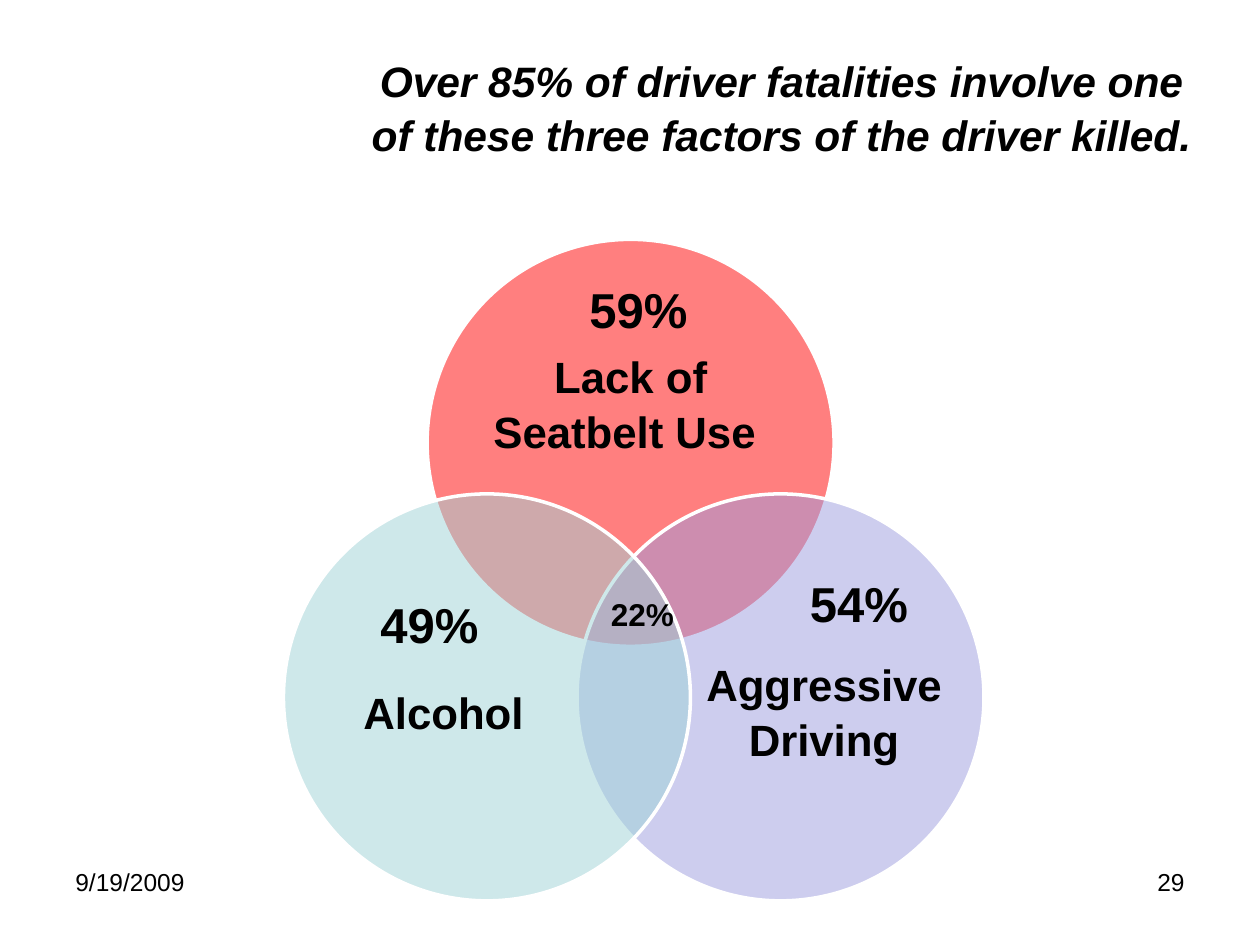
from dataclasses import dataclass

from lxml import etree
from pptx import Presentation, util as u
from pptx.dml.color import RGBColor
from pptx.enum import shapes, text
from pptx.oxml.ns import qn

WIDTH, HEIGHT = 10, 7.5
FONT = "Arial"
COLORS = {"ink": "000000", "edge": "FFFFFF", "seatbelt": "FF0000",
          "aggressive": "9C9CDF", "alcohol": "9ED3D7"}
DIAMETER = 3.23
LOWER_ROW = 3.92
LOWER_LABEL = (4.75, 1.94, 1.78)  # top, width, height
ALIGN = text.PP_ALIGN


@dataclass(frozen=True)
class Box:
    left: float
    top: float
    width: float
    height: float

    def inches(self) -> tuple:
        return tuple(u.Inches(v) for v in
                     (self.left, self.top, self.width, self.height))


@dataclass(frozen=True)
class Factor:
    color: str
    left: float
    top: float
    label: str
    label_box: Box


@dataclass(frozen=True)
class Share:
    value: str
    box: Box
    size: int = 28


def lower_label(left: float) -> Box:
    top, width, height = LOWER_LABEL
    return Box(left, top, width, height)


def share_box(left: float, top: float) -> Box:
    return Box(left, top, 0.99, 0.57)


FACTORS = [
    Factor("seatbelt", 3.39, 1.9, "Lack of Seatbelt Use ",
           Box(3.82, 2.47, 2.37, 1.45)),
    Factor("aggressive", 4.58, LOWER_ROW, "Aggressive\nDriving", lower_label(5.57)),
    Factor("alcohol", 2.25, LOWER_ROW, "Alcohol", lower_label(2.55)),
]
SHARES = [
    Share("59%", share_box(4.58, 2.17)),
    Share("49%", share_box(2.92, 4.67)),
    Share("54%", share_box(6.33, 4.5)),
    Share("22%", Box(4.75, 4.67, 0.78, 0.4), 18),
]


def color(name: str) -> RGBColor:
    return RGBColor.from_string(COLORS[name])


def write(frame, words: str, size: float, align=ALIGN.LEFT, bold=False,
          italic=False, spacing=None) -> None:
    frame.text = words
    for paragraph in frame.paragraphs:
        paragraph.alignment = align
        paragraph.line_spacing = spacing
        font = paragraph.font
        font.name, font.size = FONT, u.Pt(size)
        font.bold, font.italic = bold, italic
        font.color.rgb = color("ink")


def add_text(slide, box: Box, words: str, size: float, wrap=True, **style):
    frame = slide.shapes.add_textbox(*box.inches()).text_frame
    frame.word_wrap = wrap
    write(frame, words, size, **style)
    return frame


def add_factor(slide, factor: Factor) -> None:
    area = Box(factor.left, factor.top, DIAMETER, DIAMETER)
    circle = slide.shapes.add_shape(shapes.MSO_SHAPE.OVAL, *area.inches())
    circle.shadow.inherit = False
    circle.fill.solid()
    circle.fill.fore_color.rgb = color(factor.color)
    fill = circle.fill._xPr.find(qn("a:solidFill"))
    etree.SubElement(fill[0], qn("a:alpha"), val="50000")
    circle.line.color.rgb = color("edge")
    circle.line.width = u.Pt(2)

    label = add_text(slide, factor.label_box, factor.label, 25,
                     align=ALIGN.CENTER, bold=True, spacing=1.05)
    label.vertical_anchor = text.MSO_ANCHOR.MIDDLE
    label.margin_left = label.margin_right = 0
    label.margin_top = label.margin_bottom = 0


def add_title(slide) -> None:
    title = slide.shapes.title
    title.left, title.top, title.width, title.height = Box(
        2.83, 0.33, 6.75, 1.25).inches()
    frame = title.text_frame
    frame.word_wrap = True
    frame.auto_size = text.MSO_AUTO_SIZE.NONE
    frame.vertical_anchor = text.MSO_ANCHOR.MIDDLE
    frame.margin_bottom = u.Inches(0.27)
    write(frame, "Over 85% of driver fatalities involve one of these three "
          "factors of the driver killed.", 24.3, ALIGN.CENTER, True, True, 1.04)


def main() -> None:
    deck = Presentation()
    deck.slide_width, deck.slide_height = u.Inches(WIDTH), u.Inches(HEIGHT)
    slide = deck.slides.add_slide(deck.slide_layouts[5])
    add_title(slide)

    # Footer: date and page number, mirrored about the centre
    margin, footer_width = 0.05 * WIDTH, 2.33
    for left, words, align in (
            (margin, "9/19/2009", ALIGN.LEFT),
            (WIDTH - margin - footer_width, "29", ALIGN.RIGHT)):
        add_text(slide, Box(left, 6.83, footer_width, 0.52), words, 14, align=align)

    # Overlapping circles with their labels
    for factor in FACTORS:
        add_factor(slide, factor)

    # Percentages
    for share in SHARES:
        frame = add_text(slide, share.box, share.value, share.size,
                         wrap=False, bold=True)
        frame.auto_size = text.MSO_AUTO_SIZE.SHAPE_TO_FIT_TEXT

    deck.save("out.pptx")


if __name__ == "__main__":
    main()
